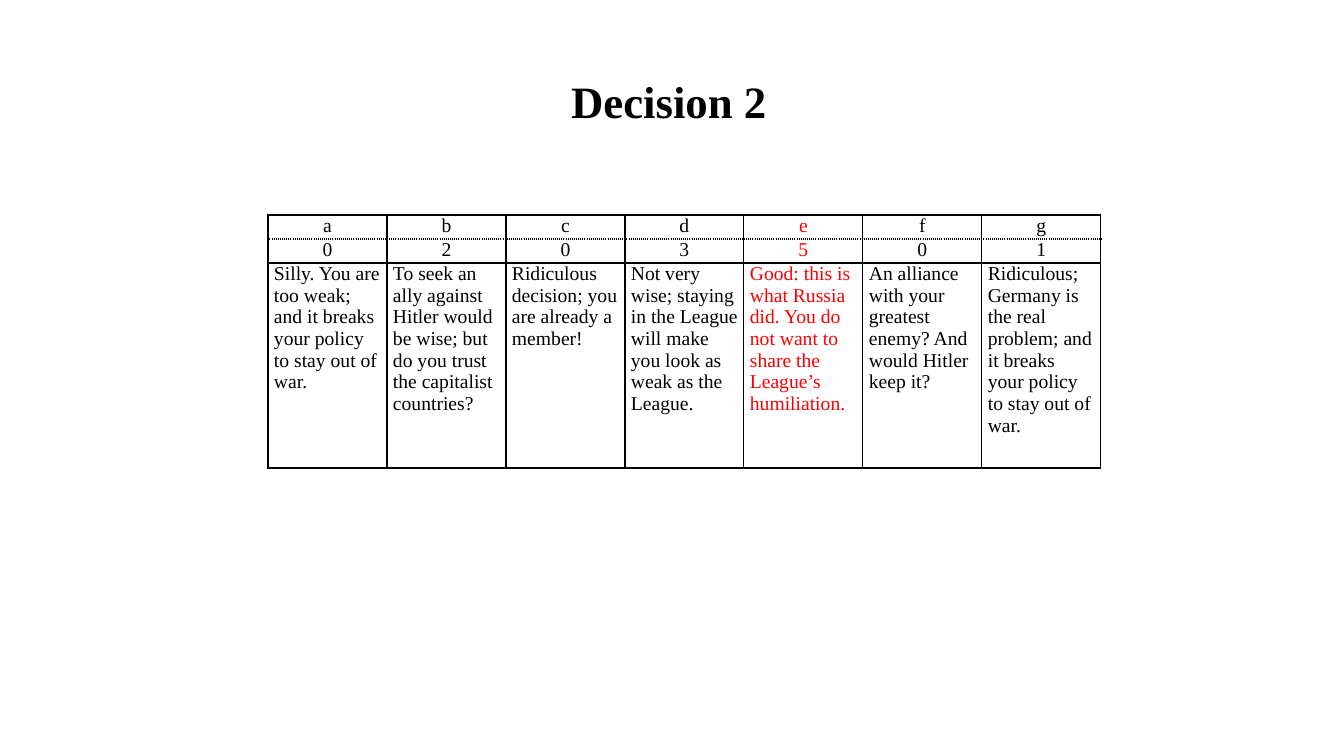
import pptx
import pptx.util
import pptx.dml.color
import pptx.enum.text
import pptx.oxml

SCALE = 914400 / 100.8
FONT = "Times New Roman"
BLACK, RED = "000000", "FF0000"
NS = "http://schemas.openxmlformats.org/drawingml/2006/main"
CENTER = pptx.enum.text.PP_ALIGN.CENTER
LEFT = pptx.enum.text.PP_ALIGN.LEFT

# Letter, score and comment of each choice
CHOICES = [
    ("a", "0", "Silly. You are too weak; and it breaks your policy to stay out of war."),
    ("b", "2", "To seek an ally against Hitler would be wise; but do you trust the capitalist countries?"),
    ("c", "0", "Ridiculous decision; you are already a member!"),
    ("d", "3", "Not very wise; staying in the League will make you look as weak as the League."),
    ("e", "5", "Good: this is what Russia did. You do not want to share the League’s humiliation."),
    ("f", "0", "An alliance with your greatest enemy? And would Hitler keep it?"),
    ("g", "1", "Ridiculous; Germany is the real problem; and it breaks your policy to stay out of war."),
]
BEST = "e"
COL = 119
ROWS = [24, 24, 205]


def px(num):
    return pptx.util.Emu(round(num * SCALE))


def color(code):
    return pptx.dml.color.RGBColor.from_string(code)


def write(frame, text, size, tint, align, bold=False):
    frame.word_wrap = True
    para = frame.paragraphs[0]
    para.text = text
    para.alignment = align
    para.font.name = FONT
    para.font.size = pptx.util.Pt(size)
    para.font.bold = bold
    para.font.color.rgb = color(tint)


def border(cell, dotted):
    """Draw the four sides; those named in dotted get dots."""
    props = cell._tc.get_or_add_tcPr()
    for spot, side in enumerate("LRTB"):
        dash = "sysDot" if side in dotted else "solid"
        line = pptx.oxml.parse_xml(
            f'<a:ln{side} xmlns:a="{NS}" w="12700"><a:solidFill>'
            f'<a:srgbClr val="{BLACK}"/></a:solidFill>'
            f'<a:prstDash val="{dash}"/></a:ln{side}>')
        props.insert(spot, line)


def add_title(slide):
    box = slide.shapes.add_textbox(px(194), px(66), px(950), px(119))
    box.text_frame.margin_top = px(8)
    write(box.text_frame, "Decision 2", 32, BLACK, CENTER, True)


def add_grid(slide):
    count = len(CHOICES)
    frame = slide.shapes.add_table(len(ROWS), count, px(268), px(215),
                                   px(COL * count), px(sum(ROWS)))
    table = frame.table
    table.first_row = table.horz_banding = False
    for row, high in zip(table.rows, ROWS):
        row.height = px(high)
    for c, choice in enumerate(CHOICES):
        table.columns[c].width = px(COL)
        tint = RED if choice[0] == BEST else BLACK
        for r, text in enumerate(choice):
            cell = table.cell(r, c)
            cell.margin_left = cell.margin_right = px(6)
            cell.margin_top = cell.margin_bottom = 0
            cell.fill.background()
            border(cell, ("B", "T", "")[r])
            write(cell.text_frame, text, 14, tint, LEFT if r == 2 else CENTER)


def main():
    deck = pptx.Presentation()
    deck.slide_width, deck.slide_height = px(1344), px(756)
    slide = deck.slides.add_slide(deck.slide_layouts[6])
    add_grid(slide)
    add_title(slide)
    deck.save("out.pptx")


if __name__ == "__main__":
    main()
